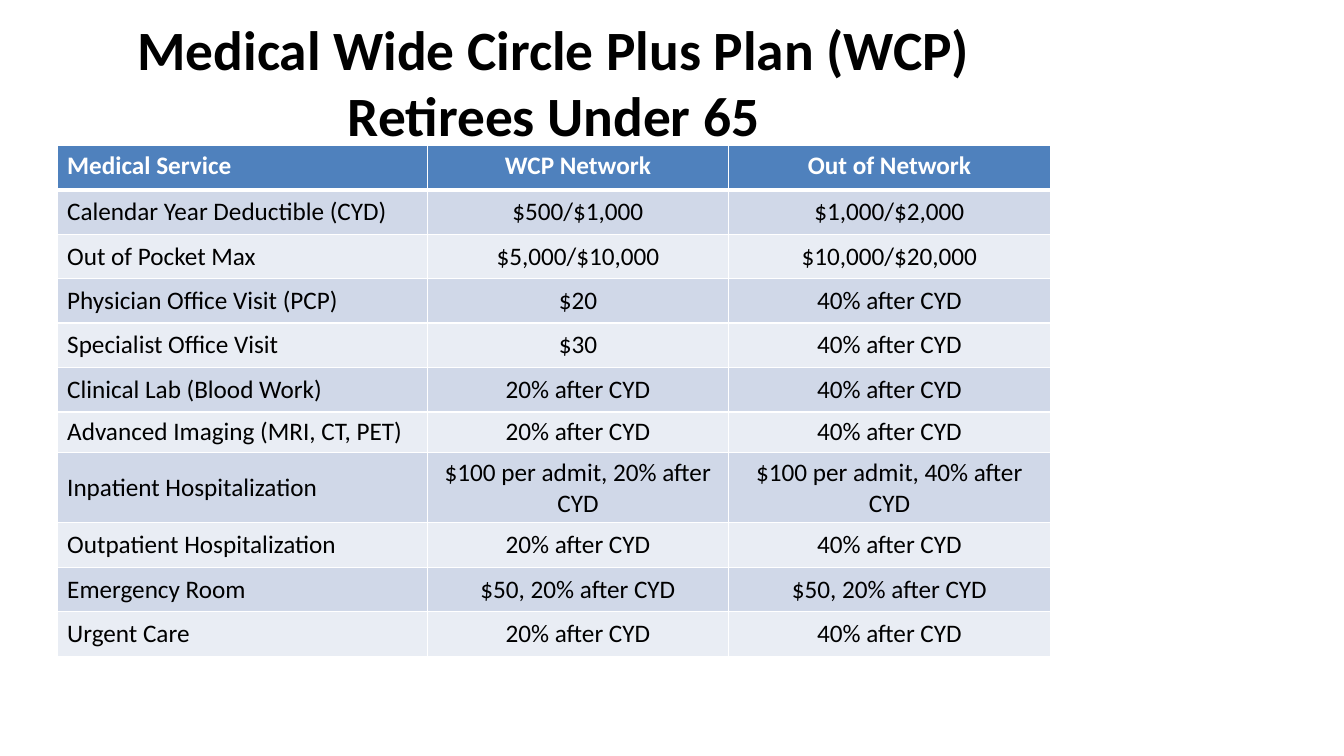
from lxml import etree
from pptx import Presentation
from pptx.dml.color import RGBColor
from pptx.enum.text import MSO_ANCHOR, PP_ALIGN
from pptx.oxml.ns import qn
from pptx.util import Cm, Pt

MIDDLE, TOP = MSO_ANCHOR.MIDDLE, MSO_ANCHOR.TOP
LEFT, CENTER = PP_ALIGN.LEFT, PP_ALIGN.CENTER

FONT = "Calibri"
BLACK, WHITE = "000000", "FFFFFF"
HEAD, BANDS = "4F81BD", ("E9EDF4", "D0D8E8")

WIDTHS = (9.34, 7.57, 8.13)
ROW, TIGHT = 1.12, 0.81
TIGHT_ROW = 6
PLAN = (
    ("Medical Service", "WCP Network", "Out of Network"),
    ("Calendar Year Deductible (CYD)", "$500/$1,000", "$1,000/$2,000"),
    ("Out of Pocket Max", "$5,000/$10,000", "$10,000/$20,000"),
    ("Physician Office Visit (PCP)", "$20", "40% after CYD"),
    ("Specialist Office Visit", "$30", "40% after CYD"),
    ("Clinical Lab (Blood Work)", "20% after CYD", "40% after CYD"),
    ("Advanced Imaging (MRI, CT, PET)", "20% after CYD", "40% after CYD"),
    ("Inpatient Hospitalization", "$100 per admit, 20% after CYD",
     "$100 per admit, 40% after CYD"),
    ("Outpatient Hospitalization", "20% after CYD", "40% after CYD"),
    ("Emergency Room", "$50, 20% after CYD", "$50, 20% after CYD"),
    ("Urgent Care", "20% after CYD", "40% after CYD"),
)


def color(value):
    return RGBColor.from_string(value)


def write(frame, text, size, ink, bold, align):
    """Fill a text frame with one evenly styled paragraph."""
    para = frame.paragraphs[0]
    para.text = text
    para.alignment = align
    font = para.font
    font.name, font.size, font.bold = FONT, Pt(size), bold
    font.color.rgb = color(ink)


def rule_below(cell, ink, width):
    """Draw the bottom border of a cell."""
    line = etree.Element(qn("a:lnB"), w=str(Pt(width)))
    fill = etree.SubElement(line, qn("a:solidFill"))
    etree.SubElement(fill, qn("a:srgbClr"), val=ink)
    cell._tc.get_or_add_tcPr().insert(0, line)


def add_title(slide, left, top, width, height):
    box = slide.shapes.add_textbox(Cm(left), Cm(top), Cm(width), Cm(height))
    frame = box.text_frame
    frame.word_wrap = True
    frame.vertical_anchor = MIDDLE
    text = "Medical Wide Circle Plus Plan (WCP)\vRetirees Under 65"
    write(frame, text, 39.6, BLACK, True, CENTER)


def add_plan(slide, left, top, width, height):
    table = slide.shapes.add_table(
        len(PLAN), len(WIDTHS), Cm(left), Cm(top), Cm(width), Cm(height)).table
    for column, share in zip(table.columns, WIDTHS):
        column.width = Cm(width * share / sum(WIDTHS))
    for r, row in enumerate(PLAN):
        table.rows[r].height = Cm(TIGHT if r == TIGHT_ROW else ROW)
        head = r == 0
        for c, text in enumerate(row):
            cell = table.cell(r, c)
            cell.fill.solid()
            cell.fill.fore_color.rgb = color(HEAD if head else BANDS[r % 2])
            cell.vertical_anchor = TOP if head else MIDDLE
            write(cell.text_frame, text, 18, WHITE if head else BLACK, head,
                  CENTER if c else LEFT)
            if head:
                rule_below(cell, WHITE, 3)


def main():
    deck = Presentation()
    deck.slide_width, deck.slide_height = Cm(33.87), Cm(19.05)
    slide = deck.slides.add_slide(deck.slide_layouts[6])
    add_title(slide, 0, 0.46, 27.91, 3.18)
    add_plan(slide, 1.44, 3.66, sum(WIDTHS), 12.85)
    deck.save("out.pptx")


if __name__ == "__main__":
    main()
